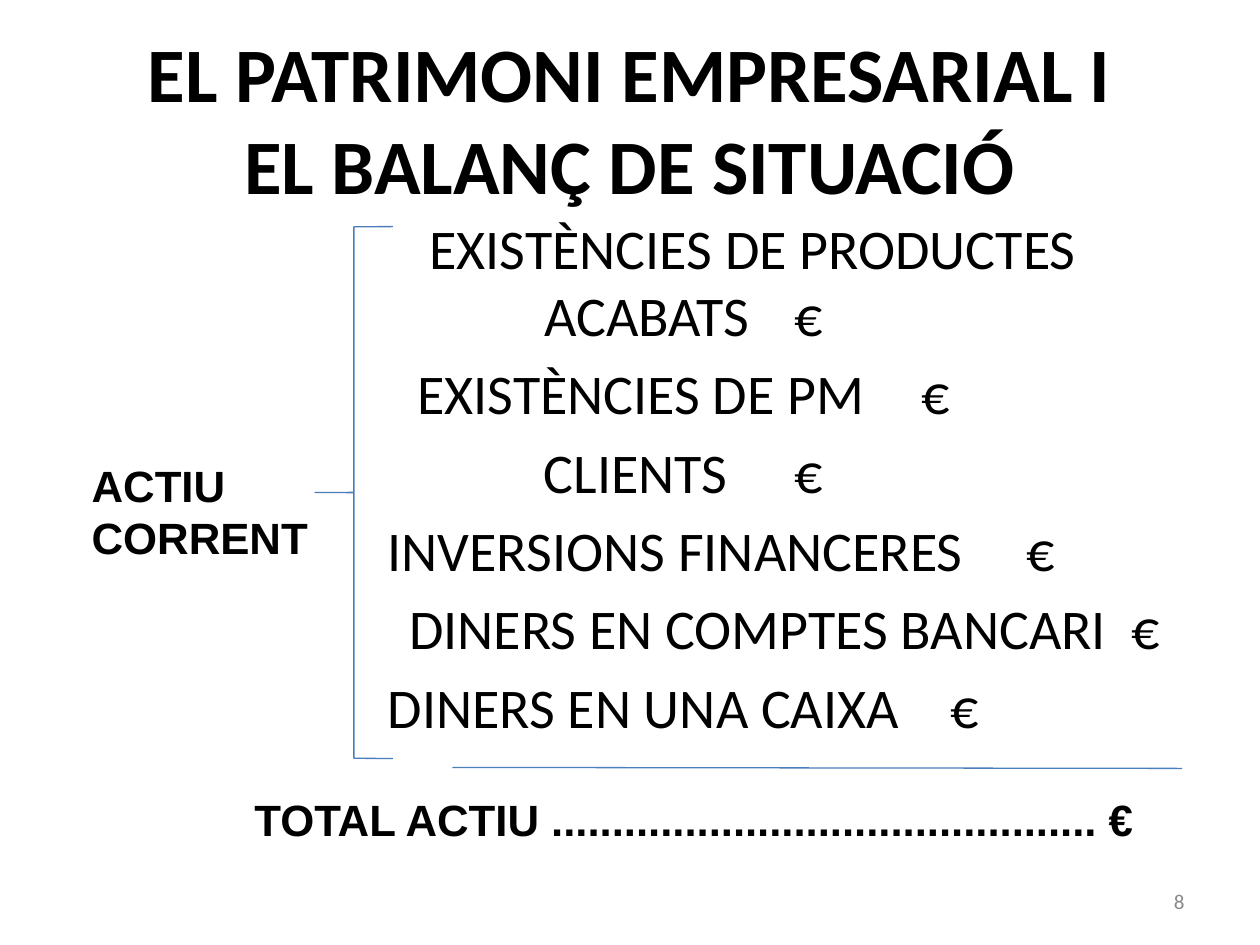
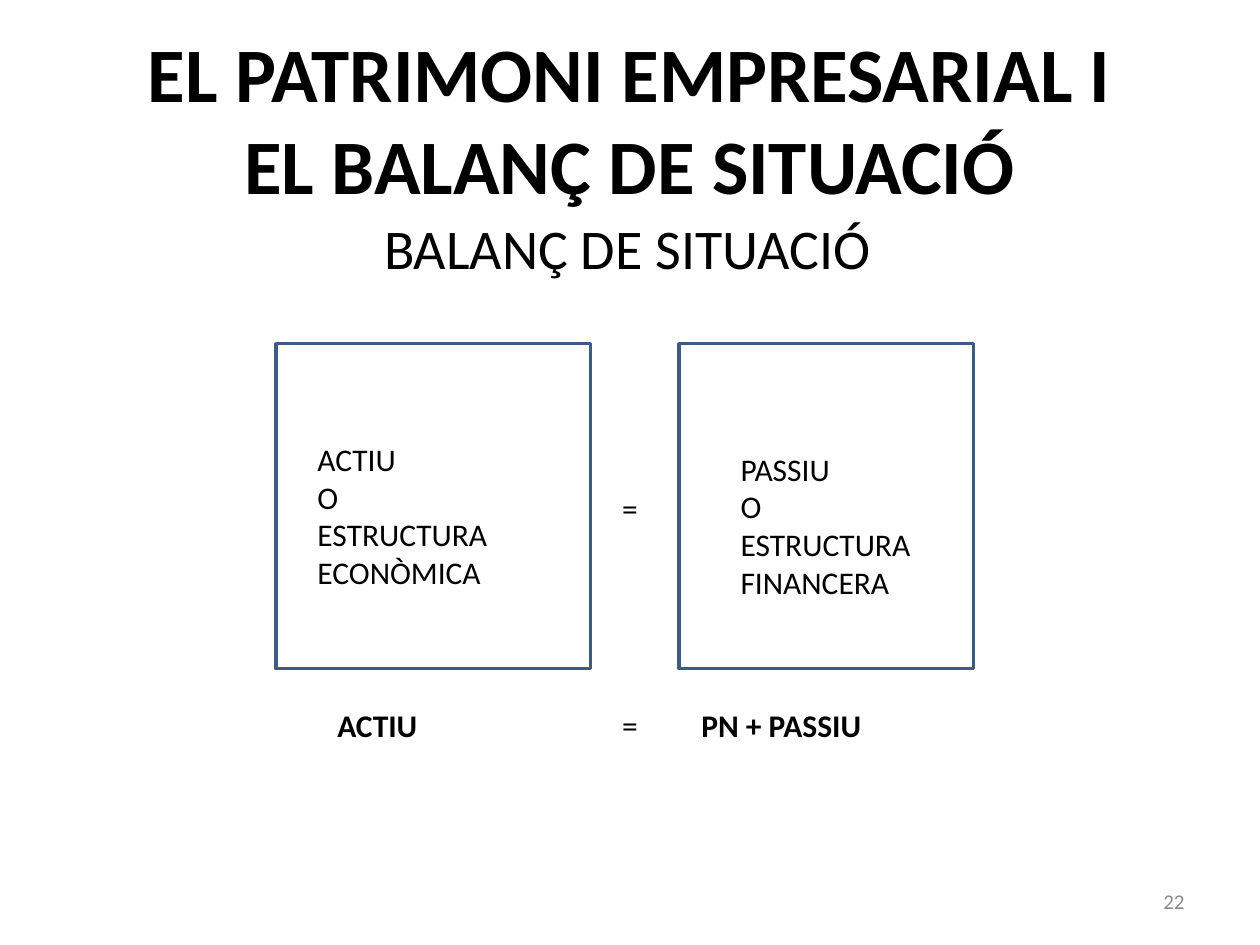
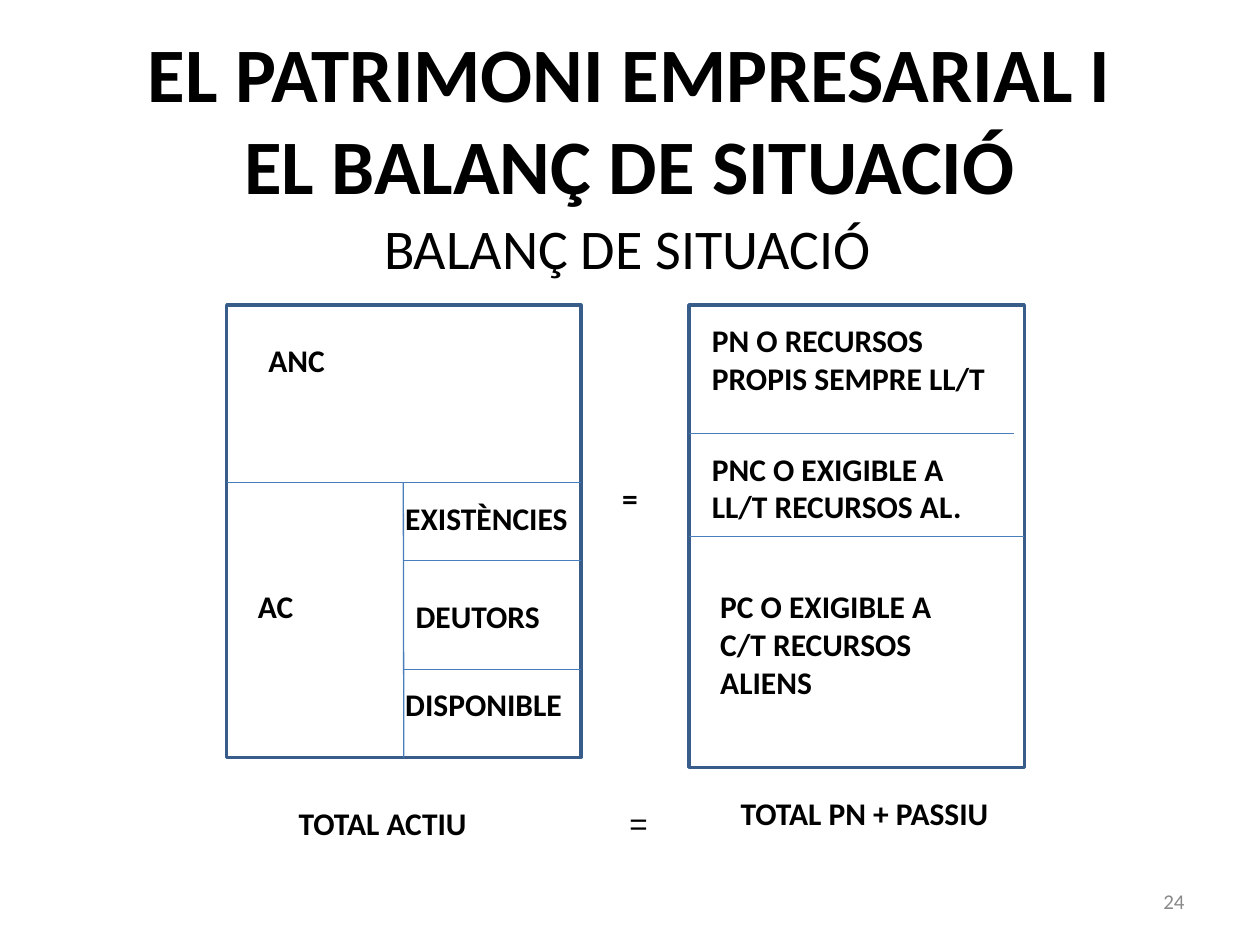
from lxml import etree
from pptx import Presentation
from pptx import util as u
from pptx.dml.color import RGBColor
from pptx.enum import shapes, text
from pptx.oxml.ns import qn

Cm, Pt = u.Cm, u.Pt
BLACK, GREY, EDGE, RULE = "000000", "898989", "385D8A", "4A7EBB"
LEFT, MID, RIGHT = text.PP_ALIGN.LEFT, text.PP_ALIGN.CENTER, text.PP_ALIGN.RIGHT
TITLE = "EL PATRIMONI EMPRESARIAL I EL BALANÇ DE SITUACIÓ"
HEAD = "BALANÇ DE SITUACIÓ"
HEAD_BOX = (3.76, 4.17, 17.78, 11.51)
LINE = 1.02


def paint(part, shade):
    """Give a colour format the colour of a hex string."""
    part.rgb = RGBColor.from_string(shade)


class Deck:
    """Hold the style and the current slide."""

    def __init__(self):
        """Start an empty deck."""
        self.file = Presentation()
        self.file.slide_width, self.file.slide_height = Cm(25.4), Cm(19.05)
        self.slide = None

    def page(self, number):
        """Open a slide with its title and number."""
        self.slide = self.file.slides.add_slide(self.file.slide_layouts[6])
        self.note([TITLE], 1.9, 0.99, 21.6, 2.77, size=44, bold=True, align=MID, middle=True)
        self.note([number], 18.2, 17.65, 5.93, size=12, shade=GREY, align=RIGHT, middle=True)

    def frame(self, x, y, w, h, middle=False):
        """Add an empty wrapping text box and return its frame."""
        body = self.slide.shapes.add_textbox(Cm(x), Cm(y), Cm(w), Cm(h)).text_frame
        body.word_wrap = True
        body.vertical_anchor = text.MSO_ANCHOR.MIDDLE if middle else text.MSO_ANCHOR.TOP
        return body

    def para(self, body, first, align=LEFT):
        """Return the first or a further paragraph of a frame."""
        par = body.paragraphs[0] if first else body.add_paragraph()
        par.alignment = align
        return par

    def run(self, par, words, size=18, bold=False, shade=BLACK, face="Calibri"):
        """Add one styled run."""
        run = par.add_run()
        run.text = words
        run.font.size, run.font.bold, run.font.name = Pt(size), bold, face
        paint(run.font.color, shade)
        return run

    def note(self, lines, x, y, w, h=LINE, align=LEFT, middle=False, lead=0, **style):
        """Add a text box with one paragraph a line."""
        body = self.frame(x, y, w, h, middle)
        for rank, words in enumerate(lines):
            par = self.para(body, rank == 0, align)
            par._p.get_or_add_pPr().set("marL", str(Cm(lead)))
            self.run(par, words, **style)

    def sums(self, rows, x, y, w, h):
        """Add centred entries, each with a gap in points before its euro sign."""
        body = self.frame(x, y, w, h)
        for rank, (words, gap, lead) in enumerate(rows):
            par = self.para(body, rank == 0, MID)
            par.space_before = Pt(6.4 if rank else 0)
            par._p.get_or_add_pPr().set("indent", str(Cm(lead)))
            self.run(par, words, 32)
            blank = self.run(par, " ", 32)
            blank.font._element.set("spc", str(gap * 100))
            self.run(par, "€", 32)

    def shape(self, kind, x, y, w, h, shade, width):
        """Add an unfilled outlined shape."""
        item = self.slide.shapes.add_shape(kind, Cm(x), Cm(y), Cm(w), Cm(h))
        item.shadow.inherit = False
        item.fill.background()
        paint(item.line.color, shade)
        item.line.width = Pt(width)
        return item

    def box(self, x, y, w, h):
        """Add an outlined rectangle."""
        return self.shape(shapes.MSO_SHAPE.RECTANGLE, x, y, w, h, EDGE, 2)

    def brace(self, x, y, w, h):
        """Add a flat left brace."""
        item = self.shape(shapes.MSO_SHAPE.LEFT_BRACE, x, y, w, h, RULE, 0.75)
        item.adjustments[0] = 0.003

    def rule(self, x, y, right, low, start=None, stop=None):
        """Add a thin line, joined to (shape, side) pairs if given."""
        item = self.slide.shapes.add_connector(
            shapes.MSO_CONNECTOR.STRAIGHT, Cm(x), Cm(y), Cm(right), Cm(low))
        paint(item.line.color, RULE)
        item.line.width = Pt(0.75)
        etree.SubElement(item._element.spPr, qn("a:effectLst"))
        if start:
            item.begin_connect(*start)
        if stop:
            item.end_connect(*stop)


def assets(deck):
    """Build the list of current assets."""
    deck.page("8")
    deck.sums([
        ("EXISTÈNCIES DE PRODUCTES ACABATS", 18, 2.8),
        ("EXISTÈNCIES DE PM", 25, 0),
        ("CLIENTS", 31, 0),
        ("INVERSIONS FINANCERES", 29, 1.53),
        ("DINERS EN COMPTES BANCARI", 7, 4.08),
        ("DINERS EN UNA CAIXA", 22, 0),
    ], 3.76, 4.17, 20.04, 14.1)
    deck.brace(6.35, 4.57, 1.57, 10.72)
    bold = dict(size=25, bold=True, face="Arial")
    deck.note(["ACTIU CORRENT"], 1.6, 9.12, 5.56, 2.77, **bold)
    deck.rule(9.12, 15.47, 23.83, 15.49)
    deck.note(["TOTAL ACTIU ............................................. €"],
              4.88, 15.85, 19.25, **bold)


def balance(deck):
    """Build the two sides of the balance."""
    deck.page("22")
    deck.note([HEAD], *HEAD_BOX, size=32, align=MID)
    for x, w in ((5.56, 6.35), (13.69, 5.94)):
        deck.box(x, 6.93, w, 6.55)
    deck.note(["ACTIU", "O", "ESTRUCTURA ECONÒMICA"], 6.15, 8.74, 5.16, 3.33)
    deck.note(["PASSIU", "O ESTRUCTURA FINANCERA"], 14.68, 8.94, 4.17, 3.33)
    deck.note(["="], 12.29, 9.73, 0.99)
    foot = 14.1
    deck.note(["ACTIU"], 6.55, foot, 4.37, bold=True)
    deck.note(["="], 12.29, foot, 1.4)
    deck.note(["PN + PASSIU"], 13.89, foot, 5.36, bold=True)


def detail(deck):
    """Build the balance split into its masses."""
    deck.page("24")
    deck.note([HEAD], *HEAD_BOX, size=32, align=MID)
    near, split, far, top = 4.57, 8.13, 11.71, 9.73
    own = deck.box(near, 6.15, 7.14, 9.12)
    owed = deck.box(13.89, 6.15, 6.76, 9.32)
    deck.rule(near, top, far, top)
    deck.rule(split, top, split, 15.27, stop=(own, 2))
    for y in (11.3, 13.49):
        deck.rule(split, y, far, y)
    deck.rule(13.89, 8.74, 20.45, 8.74)
    deck.rule(13.89, 10.81, 20.65, 10.81, (owed, 1), (owed, 3))
    for words, *place in (
        ("ANC", 5.16, 6.76, 5.56),
        ("PN O RECURSOS PROPIS SEMPRE LL/T", 14.1, 6.35, 6.15, 1.8),
        ("PNC O EXIGIBLE A LL/T RECURSOS AL.", 14.1, 8.94, 5.94, 1.8),
        ("PC O EXIGIBLE A C/T RECURSOS ALIENS", 14.27, 11.71, 4.78, 3.33),
        ("AC", 4.95, 11.71, 2.18),
        ("EXISTÈNCIES", 7.92, 9.93, 3.96),
        ("DEUTORS", 8.13, 11.91, 3.58),
        ("DISPONIBLE", 7.92, 13.69, 4.17),
        ("=", 12.29, 9.53, 1.19),
        ("TOTAL ACTIU", 5.77, 16.08, 4.37),
        ("TOTAL PN + PASSIU", 14.68, 15.88, 6.15),
    ):
        deck.note([words], *place, bold=True)
    deck.note(["="], 11.91, 16.08, 2.18, lead=0.53, face="Arial")


def main():
    """Build and save the deck."""
    deck = Deck()
    for build in (assets, balance, detail):
        build(deck)
    deck.file.save("out.pptx")


if __name__ == "__main__":
    main()
